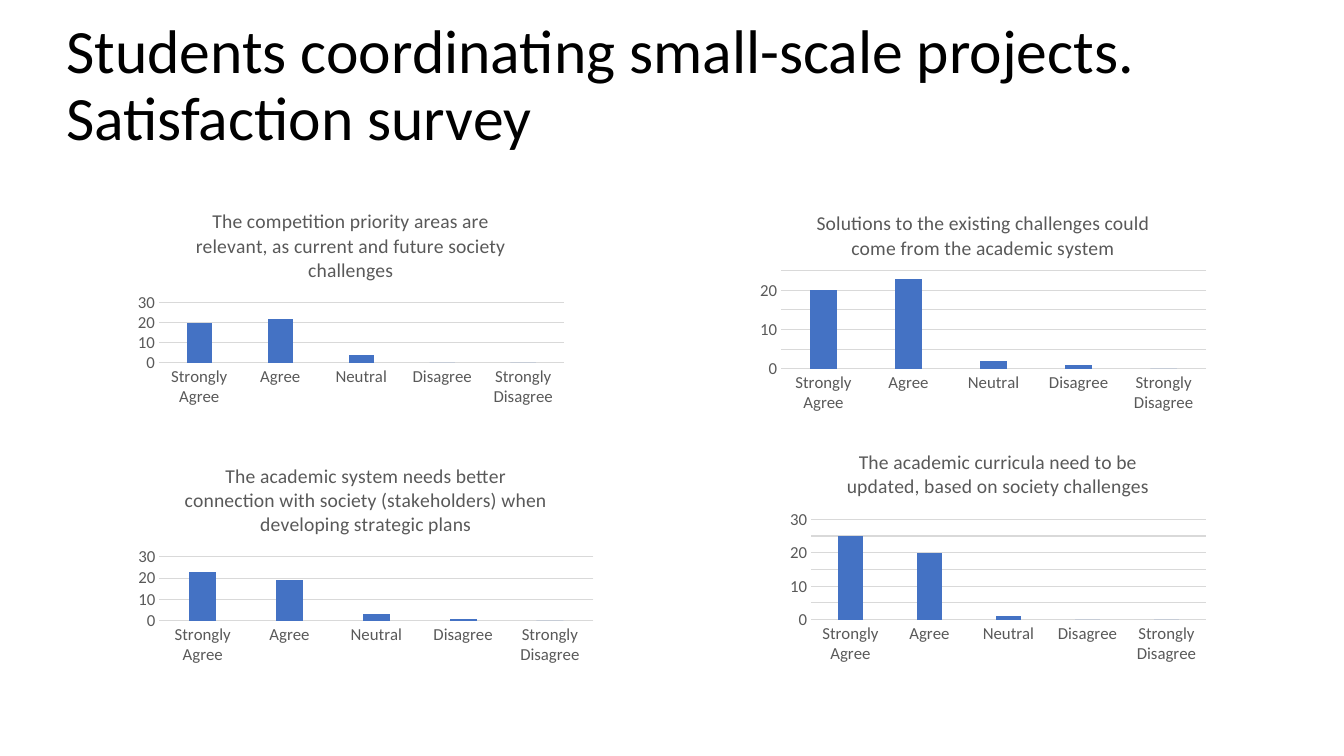
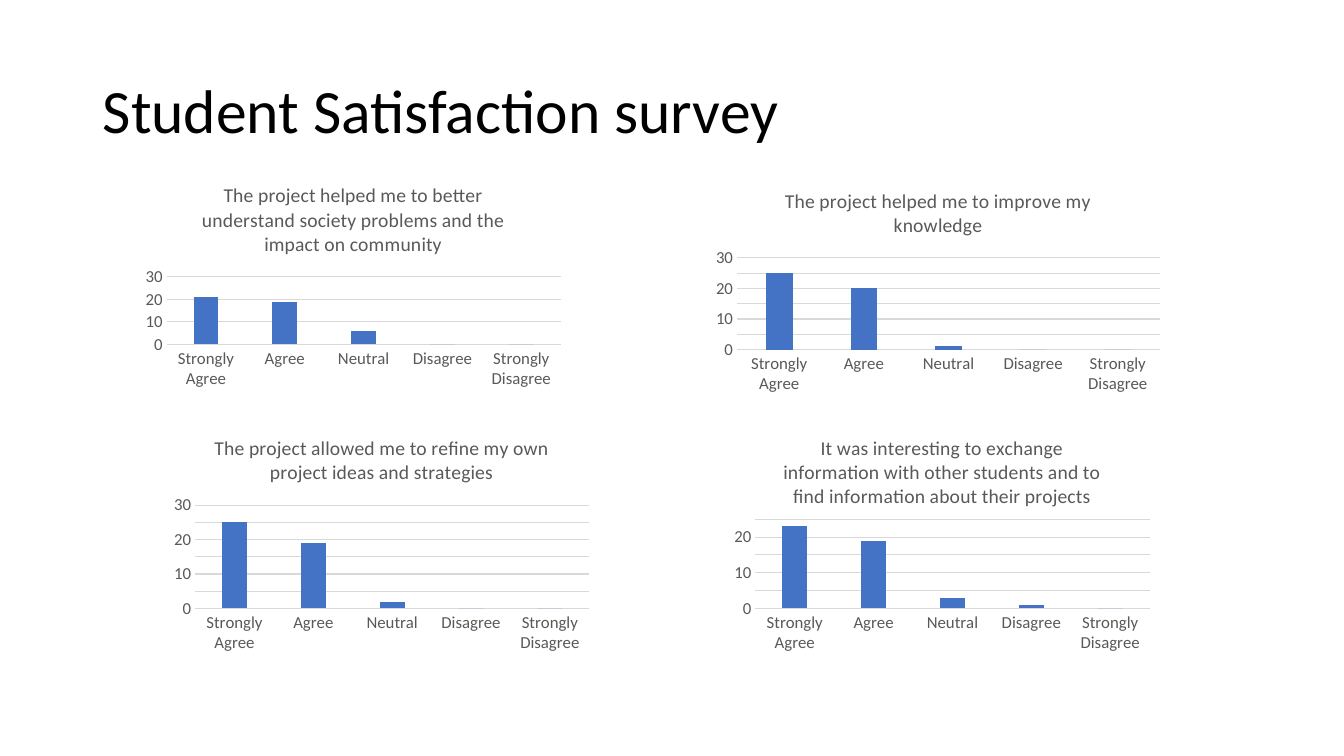
from dataclasses import dataclass

from pptx import Presentation
from pptx import util as u
from pptx.chart.data import CategoryChartData
from pptx.dml.color import RGBColor
from pptx.enum import chart as ch, text


@dataclass(frozen=True)
class Theme:
    font: str = "Calibri"
    heading: RGBColor = RGBColor.from_string("000000")
    label: RGBColor = RGBColor.from_string("595959")
    rule: RGBColor = RGBColor.from_string("D9D9D9")
    bar: RGBColor = RGBColor.from_string("4472C4")
    heading_size: int = 44
    question_size: int = 14
    label_size: int = 12
    rule_width: float = 0.75


THEME = Theme()
ANSWERS = ["Strongly Agree", "Agree", "Neutral", "Disagree", "Strongly Disagree"]
HEADING_SIZE = (29.21, 3.68)

# Each slide: heading, heading position, then (question, box, votes) in cm.
SURVEYS = [
    ("Students coordinating small-scale projects.\nSatisfaction survey", (1.42, 0.36), [
        ("Solutions to the existing challenges could come from the academic system",
         (18.92, 4.95, 11.71, 5.56), (20, 23, 2, 1, 0)),
        ("The competition priority areas are relevant, as current and future "
         "society challenges",
         (3.25, 4.9, 11.18, 5.46), (20, 22, 4, 0, 0)),
        ("The academic system needs better connection with society (stakeholders) "
         "when developing strategic plans",
         (3.25, 11.3, 11.94, 5.56), (23, 19, 3, 1, 0)),
        ("The academic curricula need to be updated, based on society challenges",
         (19.69, 10.95, 10.92, 5.89), (25, 20, 1, 0, 0)),
    ]),
    ("Student Satisfaction survey", (2.34, 1.02), [
        ("The project helped me to better understand society problems and the "
         "impact on community",
         (3.45, 4.24, 10.9, 5.66), (21, 19, 6, 0, 0)),
        ("The project helped me to improve my knowledge",
         (17.81, 4.37, 11.66, 5.66), (25, 20, 1, 0, 0)),
        ("The project allowed me to refine my own project ideas and strategies",
         (4.17, 10.59, 10.9, 5.97), (25, 19, 2, 0, 0)),
        ("It was interesting to exchange information with other students and to "
         "find information about their projects",
         (18.29, 10.59, 10.9, 5.97), (23, 19, 3, 1, 0)),
    ]),
]


def apply(target, formats):
    for name, value in formats.items():
        setattr(target, name, value)


def style_font(font, size, color):
    apply(font, {"name": THEME.font, "size": u.Pt(size), "bold": False})
    font.color.rgb = color


def style_rule(line):
    line.color.rgb = THEME.rule
    line.width = u.Pt(THEME.rule_width)


def add_heading(slide, wording, position):
    box = slide.shapes.add_textbox(*map(u.Cm, position + HEADING_SIZE))
    frame = box.text_frame
    apply(frame, {"word_wrap": True, "vertical_anchor": text.MSO_ANCHOR.MIDDLE})
    paragraph = frame.paragraphs[0]
    apply(paragraph, {"text": wording.replace("\n", "\v"), "line_spacing": 0.9})
    for run in paragraph.runs:
        style_font(run.font, THEME.heading_size, THEME.heading)


def style_axes(chart):
    for axis in (chart.category_axis, chart.value_axis):
        apply(axis, {"major_tick_mark": ch.XL_TICK_MARK.NONE,
                     "minor_tick_mark": ch.XL_TICK_MARK.NONE})
        style_font(axis.tick_labels.font, THEME.label_size, THEME.label)
    style_rule(chart.category_axis.format.line)
    chart.value_axis.format.line.fill.background()
    style_rule(chart.value_axis.major_gridlines.format.line)


def add_question_chart(slide, question, box, votes):
    """Add one survey question as a column chart with the question as its title."""
    data = CategoryChartData()
    data.categories = ANSWERS
    data.add_series("Series 1", votes)
    chart = slide.shapes.add_chart(
        ch.XL_CHART_TYPE.COLUMN_CLUSTERED, *map(u.Cm, box), data).chart
    chart.has_legend = False
    style_font(chart.font, THEME.label_size, THEME.heading)

    title = chart.chart_title.text_frame
    title.text = question
    style_font(title.paragraphs[0].runs[0].font, THEME.question_size, THEME.label)

    plot = chart.plots[0]
    apply(plot, {"gap_width": 219, "overlap": -27, "vary_by_categories": False})
    fill = plot.series[0].format.fill
    fill.solid()
    fill.fore_color.rgb = THEME.bar
    style_axes(chart)


def main():
    deck = Presentation()
    apply(deck, {"slide_width": u.Cm(33.87), "slide_height": u.Cm(19.05)})
    for heading, position, questions in SURVEYS:
        slide = deck.slides.add_slide(deck.slide_layouts[6])
        add_heading(slide, heading, position)
        for question, box, votes in questions:
            add_question_chart(slide, question, box, votes)
    deck.save("out.pptx")


if __name__ == "__main__":
    main()
